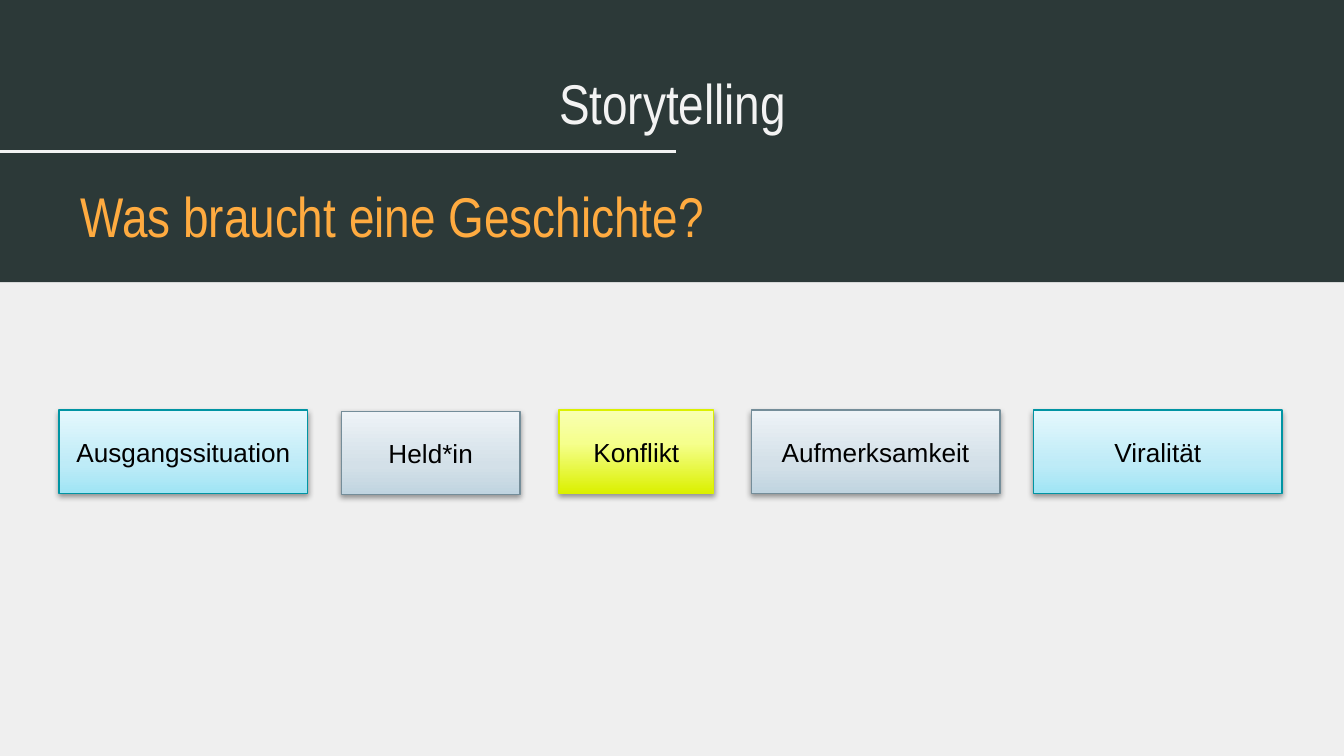
import copy

import lxml.etree
import pptx
import pptx.dml.color
import pptx.enum.shapes
import pptx.enum.text
import pptx.oxml
import pptx.oxml.ns
import pptx.util

Inches = pptx.util.Inches
RECTANGLE = pptx.enum.shapes.MSO_SHAPE.RECTANGLE
ALIGN = pptx.enum.text.PP_ALIGN
qn = pptx.oxml.ns.qn

SHADOW = (
    f'<a:outerShdw {pptx.oxml.ns.nsdecls("a")} blurRad="40000" dist="20000" '
    'dir="5400000" rotWithShape="0"><a:srgbClr val="000000">'
    '<a:alpha val="38000"/></a:srgbClr></a:outerShdw>'
)


def color(value):
    return pptx.dml.color.RGBColor.from_string(value)


def write(frame, text, align, text_color, font_format):
    para = frame.paragraphs[0]
    para.alignment = align
    span = para.add_run()
    span.text = text
    span.font.color.rgb = color(text_color)
    for name, value in font_format.items():
        setattr(span.font, name, value)


# Widescreen 16:9
deck = pptx.Presentation()
deck.slide_width = Inches(10)
deck.slide_height = Inches(10 * 9 / 16)
page = deck.slides.add_slide(deck.slide_layouts[6])
page.background.fill.solid()
page.background.fill.fore_color.rgb = color("EFEFEF")

# Dark header band
band = page.shapes.add_shape(RECTANGLE, Inches(-0.01), 0, Inches(10.01), Inches(2.1))
band.shadow.inherit = False
band.fill.solid()
band.fill.fore_color.rgb = color("2C3938")
band.line.fill.background()

# Title and question, separated by a rule
heading_font = {"name": "Arial Narrow", "size": pptx.util.Pt(30)}
headings = [
    ("Storytelling", 0.47, 0.41, ALIGN.CENTER, "F3F3F3"),
    ("Was braucht eine Geschichte?", 0.5, 1.25, ALIGN.LEFT, "FFAB40"),
]
frame_format = {"word_wrap": True}
for side in ("left", "right", "top", "bottom"):
    frame_format[f"margin_{side}"] = Inches(0.1)
for text, left, top, align, text_color in headings:
    box = page.shapes.add_textbox(Inches(left), Inches(top), Inches(9.07), Inches(0.63))
    for name, value in frame_format.items():
        setattr(box.text_frame, name, value)
    write(box.text_frame, text, align, text_color, heading_font)

rule = page.shapes.add_connector(
    pptx.enum.shapes.MSO_CONNECTOR.STRAIGHT, 0, Inches(1.13), Inches(5.03), Inches(1.13)
)
rule.line.color.rgb = color("F3F3F3")
rule.line.width = pptx.util.Pt(1.5)
lxml.etree.SubElement(rule._element.spPr, qn("a:effectLst"))

# Story elements: each style is a line colour and gradient stops from the bottom up
cyan = ("0094A3", [(0, "A0E5F5"), (0.35, "BEEBF7"), (1, "E5F8FD")])
gray = ("748D99", [(0, "C0D4E0"), (0.35, "D3E0E8"), (1, "EEF3F7")])
lime = ("DBF000", [(0, "DBF000"), (0.6, "F5FF8D"), (1, "F8FFB3")])
elements = [
    ("Ausgangssituation", 0.44, 3.05, 1.85, cyan),
    ("Held*in", 2.54, 3.06, 1.33, gray),
    ("Konflikt", 4.16, 3.05, 1.15, lime),
    ("Aufmerksamkeit", 5.59, 3.05, 1.85, gray),
    ("Viralität", 7.69, 3.05, 1.85, cyan),
]
element_font = {"name": "Arial", "size": pptx.util.Pt(14)}
for text, left, top, width, (line_color, stops) in elements:
    box = page.shapes.add_shape(
        RECTANGLE, Inches(left), Inches(top), Inches(width), Inches(0.62)
    )
    box.line.color.rgb = color(line_color)
    box.line.width = pptx.util.Pt(0.75)

    box.fill.gradient()
    box.fill.gradient_angle = 90
    stop_list = box._element.spPr.find(".//" + qn("a:gsLst"))
    stop_list.append(copy.deepcopy(stop_list[0]))
    for stop, (position, stop_color) in zip(box.fill.gradient_stops, stops):
        stop.position = position
        stop.color.rgb = color(stop_color)

    box.shadow.inherit = False
    effects = box._element.spPr.find(qn("a:effectLst"))
    effects.append(pptx.oxml.parse_xml(SHADOW))

    box.text_frame.word_wrap = True
    box.text_frame.vertical_anchor = pptx.enum.text.MSO_ANCHOR.MIDDLE
    write(box.text_frame, text, ALIGN.CENTER, "000000", element_font)

deck.save("out.pptx")
